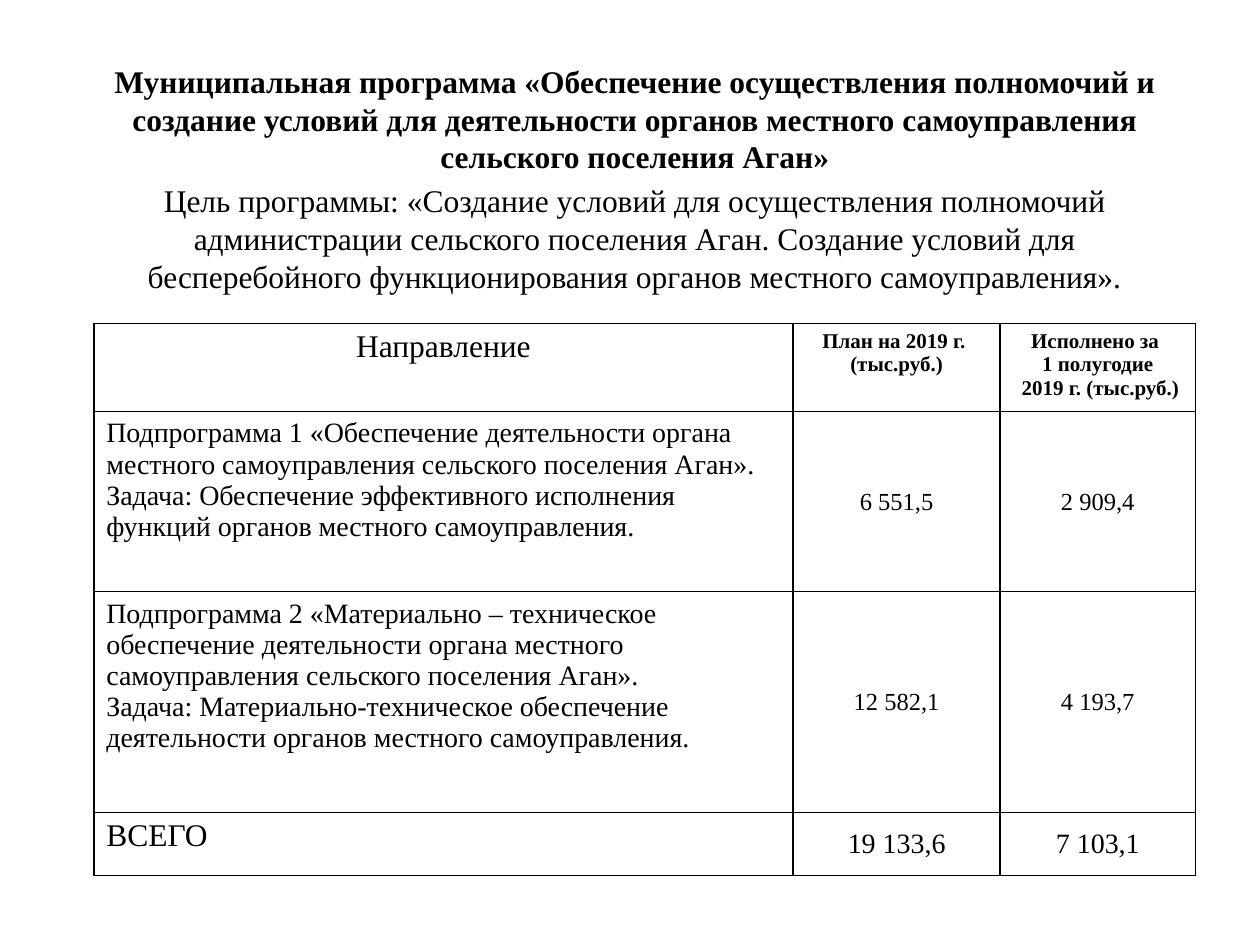
from dataclasses import dataclass

from lxml import etree
from pptx import Presentation
from pptx import util as u
from pptx.dml import color
from pptx.enum import text
from pptx.oxml import ns

COLORS = {"ink": "000000", "paper": "FFFFFF"}
FONT = "Times New Roman"
CENTER, LEFT = text.PP_ALIGN.CENTER, text.PP_ALIGN.LEFT
TOP, MIDDLE = text.MSO_ANCHOR.TOP, text.MSO_ANCHOR.MIDDLE


@dataclass
class CellText:
    lines: list[str]
    size: int
    align: text.PP_ALIGN = CENTER
    anchor: text.MSO_ANCHOR = TOP
    bold: bool = False


def add_text(p, content: str, *, size: int, align=CENTER, bold=False,
             before: float = 0) -> None:
    p.alignment = align
    p.space_before = u.Pt(before)
    r = p.add_run()
    r.text = content
    r.font.name = FONT
    r.font.size = u.Pt(size)
    r.font.bold = bold
    r.font.color.rgb = color.RGBColor.from_string(COLORS["ink"])


def add_borders(cell, width: u.Length) -> None:
    tc_pr = cell._tc.get_or_add_tcPr()
    for i, side in enumerate(("lnL", "lnR", "lnT", "lnB")):
        ln = etree.Element(ns.qn(f"a:{side}"), w=str(int(width)))
        fill = etree.SubElement(ln, ns.qn("a:solidFill"))
        etree.SubElement(fill, ns.qn("a:srgbClr"), val=COLORS["ink"])
        tc_pr.insert(i, ln)


def fill_cell(cell, item: CellText) -> None:
    cell.fill.solid()
    cell.fill.fore_color.rgb = color.RGBColor.from_string(COLORS["paper"])
    cell.vertical_anchor = item.anchor
    tf = cell.text_frame
    for i, line in enumerate(item.lines):
        p = tf.add_paragraph() if i else tf.paragraphs[0]
        add_text(p, line, size=item.size, align=item.align, bold=item.bold)
    add_borders(cell, u.Pt(1))


def table_row(label: CellText, values: list[str], size: int) -> list[CellText]:
    return [label] + [CellText([v], size, anchor=MIDDLE) for v in values]


COLUMNS = [14.1, 4.17, 3.94]
HEIGHTS = [1.27, 3.63, 4.45, 1.27]
ROWS = [
    [
        CellText(["Направление"], 18),
        CellText(["План на 2019 г. ", "(тыс.руб.)"], 12, bold=True),
        CellText(["Исполнено за ", "1 полугодие", " 2019 г. (тыс.руб.)"], 12, bold=True),
    ],
    table_row(CellText([
        "Подпрограмма 1 «Обеспечение деятельности органа местного "
        "самоуправления сельского поселения Аган».",
        "Задача: Обеспечение эффективного исполнения функций органов "
        "местного самоуправления."], 16, LEFT), ["6 551,5", "2 909,4"], 14),
    table_row(CellText([
        "Подпрограмма 2 «Материально – техническое обеспечение деятельности "
        "органа местного самоуправления сельского поселения Аган».",
        "Задача: Материально-техническое обеспечение деятельности органов "
        "местного самоуправления."], 16, LEFT), ["12 582,1", "4 193,7"], 14),
    table_row(CellText(["ВСЕГО"], 18, LEFT), ["19 133,6", "7 103,1"], 16),
]

prs = Presentation()
prs.slide_width, prs.slide_height = u.Cm(25.4), u.Cm(19.05)
s = prs.slides.add_slide(prs.slide_layouts[6])

# Programme title and goal
tf = s.shapes.add_textbox(u.Cm(1.9), u.Cm(1.12), u.Cm(21.8), u.Cm(17)).text_frame
tf.word_wrap = True
add_text(tf.paragraphs[0],
         "Муниципальная программа «Обеспечение осуществления полномочий и "
         "создание условий для деятельности органов местного самоуправления "
         "сельского поселения Аган»", size=18, bold=True)
add_text(tf.add_paragraph(),
         "Цель программы: «Создание условий для осуществления полномочий "
         "администрации сельского поселения Аган. Создание условий для "
         "бесперебойного функционирования органов местного самоуправления».",
         size=18, before=3.6)

# Budget table
table = s.shapes.add_table(len(ROWS), len(COLUMNS), u.Cm(1.89), u.Cm(6.52),
                           u.Cm(sum(COLUMNS)), u.Cm(sum(HEIGHTS))).table
for column, width in zip(table.columns, COLUMNS):
    column.width = u.Cm(width)
for row, height, items in zip(table.rows, HEIGHTS, ROWS):
    row.height = u.Cm(height)
    for cell, item in zip(row.cells, items):
        fill_cell(cell, item)

prs.save("out.pptx")
